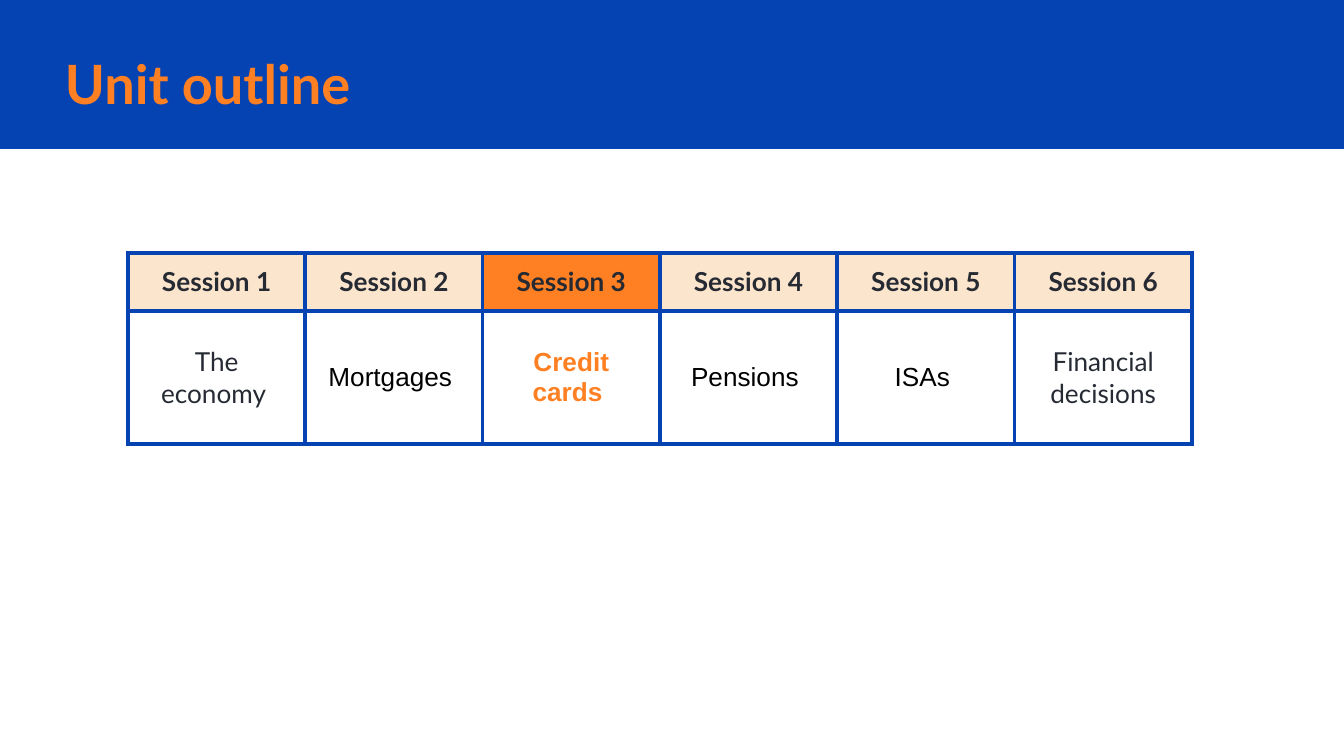
import lxml.etree
import pptx
import pptx.dml.color
import pptx.enum.shapes
import pptx.enum.text
import pptx.oxml.ns
import pptx.util

PX = 914400 / 134.4
COLORS = {"blue": "0543B3", "orange": "FF8022", "peach": "FCE5CD",
          "ink": "262A33", "black": "000000"}
TOPICS = [  # text, font, colour, bold
    ("The economy ", "Lato", "ink", False),
    ("Mortgages ", "Arial", "black", False),
    ("Credit cards ", "Arial", "orange", True),
    ("Pensions ", "Arial", "black", False),
    ("ISAs ", "Arial", "black", False),
    ("Financial decisions", "Lato", "ink", False),
]
CURRENT = 3


def px(n):
    return pptx.util.Emu(round(n * PX))


def rgb(name):
    return pptx.dml.color.RGBColor.from_string(COLORS[name])


def add_run(p, text, size, font, color, bold):
    r = p.add_run()
    r.text = text
    r.font.size = pptx.util.Pt(size)
    r.font.name = font
    r.font.bold = bold
    r.font.color.rgb = rgb(color)


def set_margins(box):
    """Give a text frame or a cell the same inset on every side."""
    box.margin_left = box.margin_right = px(13)
    box.margin_top = box.margin_bottom = px(13)


def add_band(s):
    sp = s.shapes.add_shape(pptx.enum.shapes.MSO_SHAPE.RECTANGLE,
                            0, 0, px(1344), px(149))
    sp.shadow.inherit = False
    sp.fill.solid()
    sp.fill.fore_color.rgb = rgb("blue")
    sp.line.fill.background()


def add_title(s, text):
    tf = s.shapes.add_textbox(px(52), px(45), px(1137), px(75)).text_frame
    tf.word_wrap = True
    tf.vertical_anchor = pptx.enum.text.MSO_ANCHOR.MIDDLE
    set_margins(tf)
    add_run(tf.paragraphs[0], text, 29, "Lato", "orange", True)


def set_borders(cell, color, width):
    qn = pptx.oxml.ns.qn
    tc_pr = cell._tc.get_or_add_tcPr()
    for side in ("a:lnL", "a:lnR", "a:lnT", "a:lnB"):
        ln = lxml.etree.SubElement(tc_pr, qn(side), w=str(pptx.util.Pt(width)))
        fill = lxml.etree.SubElement(ln, qn("a:solidFill"))
        lxml.etree.SubElement(fill, qn("a:srgbClr"), val=COLORS[color])


def fill_cell(cell, anchor, fill, *run):
    set_borders(cell, "blue", 2.25)
    if fill:
        cell.fill.solid()
        cell.fill.fore_color.rgb = rgb(fill)
    else:
        cell.fill.background()
    set_margins(cell)
    cell.vertical_anchor = anchor
    p = cell.text_frame.paragraphs[0]
    p.alignment = pptx.enum.text.PP_ALIGN.CENTER
    add_run(p, *run)


def add_sessions(s):
    anchor = pptx.enum.text.MSO_ANCHOR
    table = s.shapes.add_table(2, len(TOPICS), px(128), px(253),
                               px(1064), px(191)).table
    table.first_row = table.horz_banding = False
    for row, height in zip(table.rows, (58, 133)):
        row.height = px(height)
    for i, (text, font, color, bold) in enumerate(TOPICS):
        fill = "orange" if i + 1 == CURRENT else "peach"
        fill_cell(table.cell(0, i), anchor.TOP, fill,
                  f"Session {i + 1}", 14, "Lato", "ink", True)
        fill_cell(table.cell(1, i), anchor.MIDDLE, None,
                  text, 14, font, color, bold)


def main():
    prs = pptx.Presentation()
    prs.slide_width, prs.slide_height = px(1344), px(756)
    s = prs.slides.add_slide(prs.slide_layouts[6])
    add_band(s)
    add_title(s, "Unit outline")
    add_sessions(s)
    prs.save("out.pptx")


if __name__ == "__main__":
    main()
